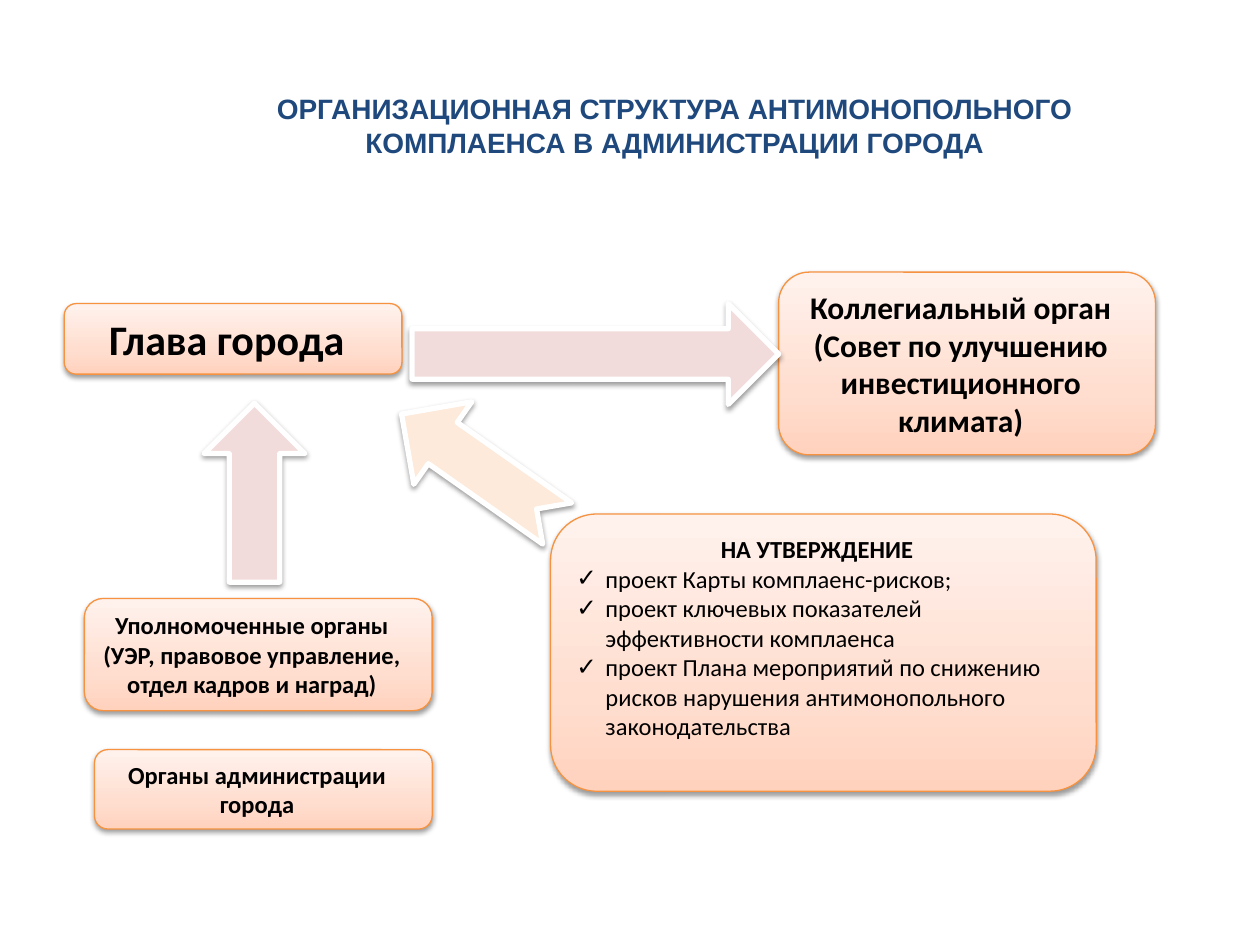
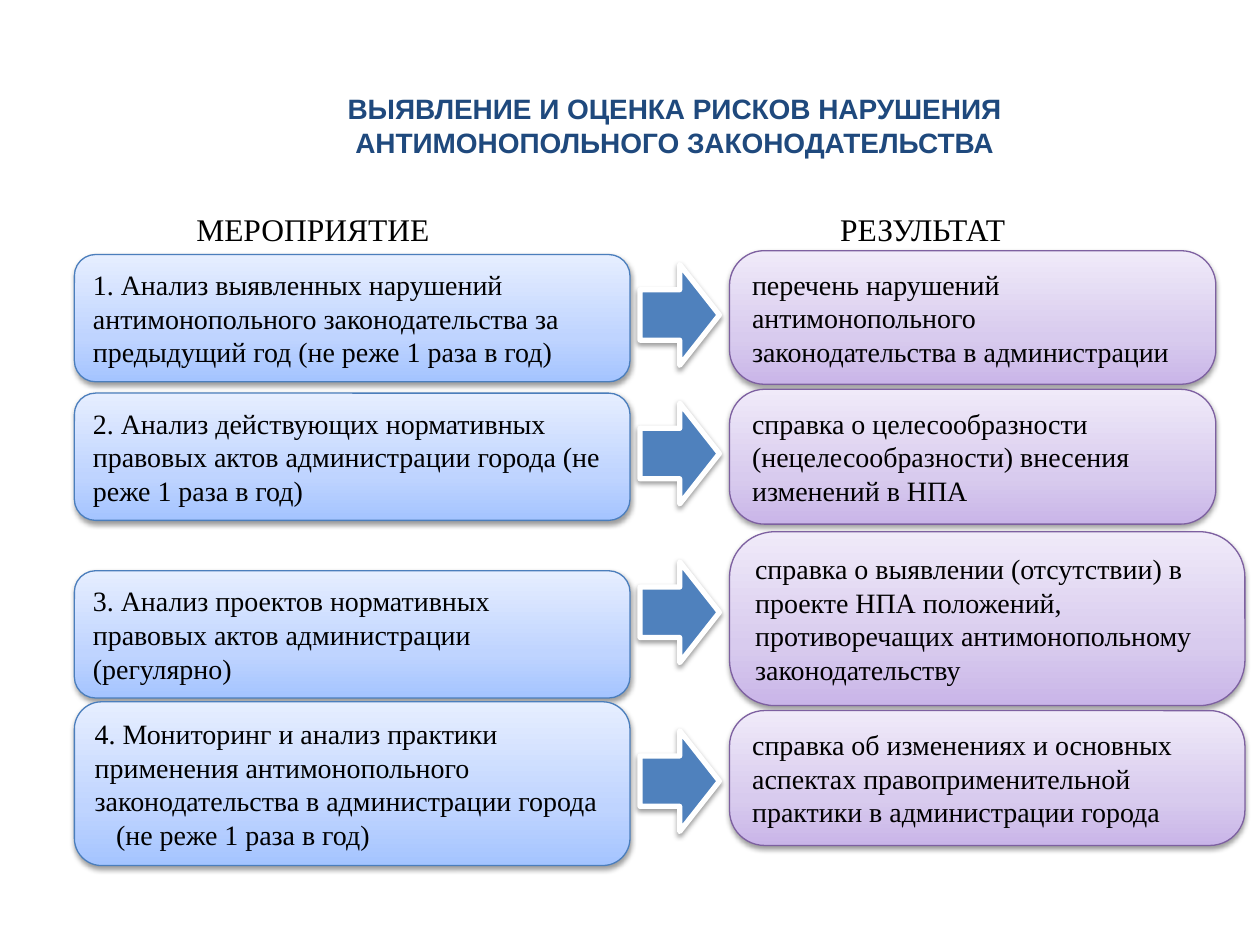
import pptx
import pptx.util
import pptx.oxml
import pptx.oxml.ns
import pptx.dml.color
import pptx.enum.shapes
import pptx.enum.text
from lxml import etree

Inches, Pt = pptx.util.Inches, pptx.util.Pt
RGB = pptx.dml.color.RGBColor.from_string
SHAPE = pptx.enum.shapes.MSO_SHAPE
ALIGN = pptx.enum.text.PP_ALIGN
ANCHOR = pptx.enum.text.MSO_ANCHOR
qn = pptx.oxml.ns.qn
NAMESPACE = pptx.oxml.ns.nsdecls("a")

THEME = {
    # Gradients run from the bottom edge to the top edge.
    "peach": {"fill": ["FFD2BD", "FFDED0", "FFF2ED"], "line": "F69240", "width": 0.75},
    "sky": {"fill": ["A4C4FF", "BFD4FF", "E6EEFF"], "line": "4B7EBC", "width": 0.75},
    "lilac": {"fill": ["C9B5E8", "D8CBEE", "F0EAF9"], "line": "7D60A0", "width": 0.75},
    "rose arrow": {"fill": ["F2DCDB"], "line": "FFFFFF", "width": 3},
    "cream arrow": {"fill": ["FDEADA"], "line": "FFFFFF", "width": 3},
    "blue arrow": {"fill": ["4F81BD"], "line": "FFFFFF", "width": 3},
    "title": {"name": "Arial", "size": Pt(16), "bold": True, "color": "1F497D"},
    "leader": {"name": "Calibri", "size": Pt(24), "bold": True, "color": "000000"},
    "council": {"name": "Calibri", "size": Pt(18), "bold": True, "color": "000000"},
    "body": {"name": "Calibri", "size": Pt(14), "bold": True, "color": "000000"},
    "item": {"name": "Calibri", "size": Pt(14), "bold": False, "color": "000000"},
    "heading": {"name": "Times New Roman", "size": Pt(18), "bold": False, "color": "000000"},
    "step": {"name": "Times New Roman", "size": Pt(16), "bold": False, "color": "000000"},
}
RIGHT_INDENT = Inches(0.1)
BULLET_INDENT = Inches(0.23)


def add_block(page, kind, place, look, rotation=0):
    """Add a preset shape with a themed fill, outline and soft shadow."""
    block = page.shapes.add_shape(kind, *[Inches(value) for value in place])
    block.rotation = rotation
    style = THEME[look]
    if len(style["fill"]) == 1:
        block.fill.solid()
        block.fill.fore_color.rgb = RGB(style["fill"][0])
    else:
        block.fill.gradient()
        block.fill.gradient_angle = 90
        stops = block._element.spPr.find(".//" + qn("a:gsLst"))
        for stop in list(stops):
            stops.remove(stop)
        for position, color in zip((0, 35, 100), style["fill"]):
            stops.append(pptx.oxml.parse_xml(
                f'<a:gs {NAMESPACE} pos="{position * 1000}"><a:srgbClr val="{color}"/></a:gs>'))
    block.line.color.rgb = RGB(style["line"])
    block.line.width = Pt(style["width"])
    outline = block._element.spPr.find(qn("a:ln"))
    etree.SubElement(outline, qn("a:round"))
    block.shadow.inherit = False
    block._element.spPr.find(qn("a:effectLst")).append(pptx.oxml.parse_xml(
        f'<a:outerShdw {NAMESPACE} blurRad="{Pt(3.1)}" dist="{Pt(1.6)}" dir="5400000" '
        'rotWithShape="0"><a:srgbClr val="000000"><a:alpha val="38000"/></a:srgbClr></a:outerShdw>'))
    return block


def write_lines(box, lines, align, anchor=ANCHOR.MIDDLE, right=RIGHT_INDENT):
    """Write (text, style, left indent, bullet) tuples, one paragraph each."""
    frame = box.text_frame
    frame.word_wrap = True
    frame.vertical_anchor = anchor
    for number, (text, style, left, bullet) in enumerate(lines):
        para = frame.add_paragraph() if number else frame.paragraphs[0]
        para.alignment = ALIGN.LEFT if bullet else align
        properties = para._p.get_or_add_pPr()
        properties.set("marL", str(left))
        properties.set("marR", str(right))
        if bullet:
            properties.set("indent", str(-left))
            etree.SubElement(properties, qn("a:buFont"), typeface=THEME[style]["name"])
            etree.SubElement(properties, qn("a:buChar"), char=bullet)
        span = para.add_run()
        span.text = text
        for name, value in THEME[style].items():
            if name == "color":
                span.font.color.rgb = RGB(value)
            else:
                setattr(span.font, name, value)


deck = pptx.Presentation()
deck.slide_width, deck.slide_height = Inches(10), Inches(7.5)

pages = []
for title_text in [
    "ОРГАНИЗАЦИОННАЯ СТРУКТУРА АНТИМОНОПОЛЬНОГО КОМПЛАЕНСА В АДМИНИСТРАЦИИ ГОРОДА",
    "ВЫЯВЛЕНИЕ И ОЦЕНКА РИСКОВ НАРУШЕНИЯ АНТИМОНОПОЛЬНОГО ЗАКОНОДАТЕЛЬСТВА",
]:
    page = deck.slides.add_slide(deck.slide_layouts[5])
    title = page.shapes.title
    title.left, title.top = Inches(1.93), Inches(0.68)
    title.width, title.height = Inches(6.85), Inches(0.64)
    title.text_frame.auto_size = pptx.enum.text.MSO_AUTO_SIZE.NONE
    write_lines(title, [(title_text, "title", 0, None)], ALIGN.CENTER, ANCHOR.TOP, right=0)
    pages.append(page)
structure_page, risk_page = pages

# Compliance structure
for place, style, texts in [
    ((0.51, 2.41, 2.68, 0.56), "leader", ["Глава города"]),
    ((6.18, 2.16, 2.99, 1.45), "council",
     ["Коллегиальный орган (Совет по улучшению инвестиционного климата)"]),
    ((0.67, 4.75, 2.76, 0.89), "body",
     ["Уполномоченные органы", "(УЭР, правовое управление, отдел кадров и наград)"]),
    ((0.75, 5.95, 2.68, 0.63), "body", ["Органы администрации города"]),
]:
    body = add_block(structure_page, SHAPE.ROUNDED_RECTANGLE, place, "peach")
    write_lines(body, [(text, style, 0, None) for text in texts], ALIGN.CENTER)

add_block(structure_page, SHAPE.RIGHT_ARROW, (3.27, 2.41, 2.91, 0.8), "rose arrow")
add_block(structure_page, SHAPE.RIGHT_ARROW, (1.31, 3.51, 1.42, 0.8), "rose arrow", 270)

approval = add_block(structure_page, SHAPE.ROUNDED_RECTANGLE, (4.37, 4.08, 4.33, 2.2), "peach")
approval.text_frame.margin_bottom = Inches(0.29)
approval_items = [
    "проект Карты комплаенс-рисков;",
    "проект ключевых показателей эффективности комплаенса",
    "проект Плана мероприятий по снижению рисков нарушения антимонопольного законодательства",
]
write_lines(
    approval,
    [("НА УТВЕРЖДЕНИЕ", "body", 0, None)]
    + [(item, "item", BULLET_INDENT, "✓") for item in approval_items],
    ALIGN.CENTER,
)
add_block(structure_page, SHAPE.NOTCHED_RIGHT_ARROW, (3.05, 3.32, 1.51, 0.8), "cream arrow", 215.1)

# Risk activities and their results
for left, width, text in [(1.46, 2.07, "МЕРОПРИЯТИЕ"), (6.57, 1.52, "РЕЗУЛЬТАТ")]:
    heading = risk_page.shapes.add_textbox(Inches(left), Inches(1.62), Inches(width), Inches(0.4))
    write_lines(heading, [(text, "heading", 0, None)], ALIGN.LEFT, ANCHOR.TOP, right=0)
    heading.text_frame.word_wrap = False

# Each row: activity (top, height, right indent, texts), arrow top,
# result (top, width, height, text)
for activity, arrow_top, result in [
    ((2.02, 1.01, 0, ["1. Анализ выявленных нарушений антимонопольного законодательства за "
                      "предыдущий год (не реже 1 раза в год)"]), 2.1,
     (1.99, 3.86, 1.06, "перечень нарушений антимонопольного законодательства в администрации")),
    ((3.12, 1.01, 0, ["2. Анализ действующих нормативных правовых актов администрации города "
                      "(не реже 1 раза в год)"]), 3.2,
     (3.09, 3.86, 1.07, "справка о целесообразности (нецелесообразности) внесения изменений в НПА")),
    ((4.53, 1.01, RIGHT_INDENT,
      ["3. Анализ проектов нормативных правовых актов администрации (регулярно)"]), 4.46,
     (4.22, 4.09, 1.38, "справка о выявлении (отсутствии) в проекте НПА положений, "
                        "противоречащих антимонопольному законодательству")),
    ((5.57, 1.3, 0, ["4. Мониторинг и анализ практики применения антимонопольного "
                     "законодательства в администрации города", "(не реже 1 раза в год)"]), 5.8,
     (5.64, 4.09, 1.07, "справка об изменениях и основных аспектах правоприменительной "
                        "практики в администрации города")),
]:
    top, height, right_indent, texts = activity
    activity_box = add_block(risk_page, SHAPE.ROUNDED_RECTANGLE, (0.59, top, 4.41, height), "sky")
    write_lines(
        activity_box,
        [(text, "step", Inches(0.17) * number, None) for number, text in enumerate(texts)],
        ALIGN.LEFT,
        right=right_indent,
    )
    add_block(risk_page, SHAPE.RIGHT_ARROW, (5.08, arrow_top, 0.63, 0.8), "blue arrow")
    top, width, height, text = result
    result_box = add_block(risk_page, SHAPE.ROUNDED_RECTANGLE, (5.79, top, width, height), "lilac")
    result_box.adjustments[0] = 0.26
    write_lines(result_box, [(text, "step", 0, None)], ALIGN.LEFT)

deck.save("out.pptx")
